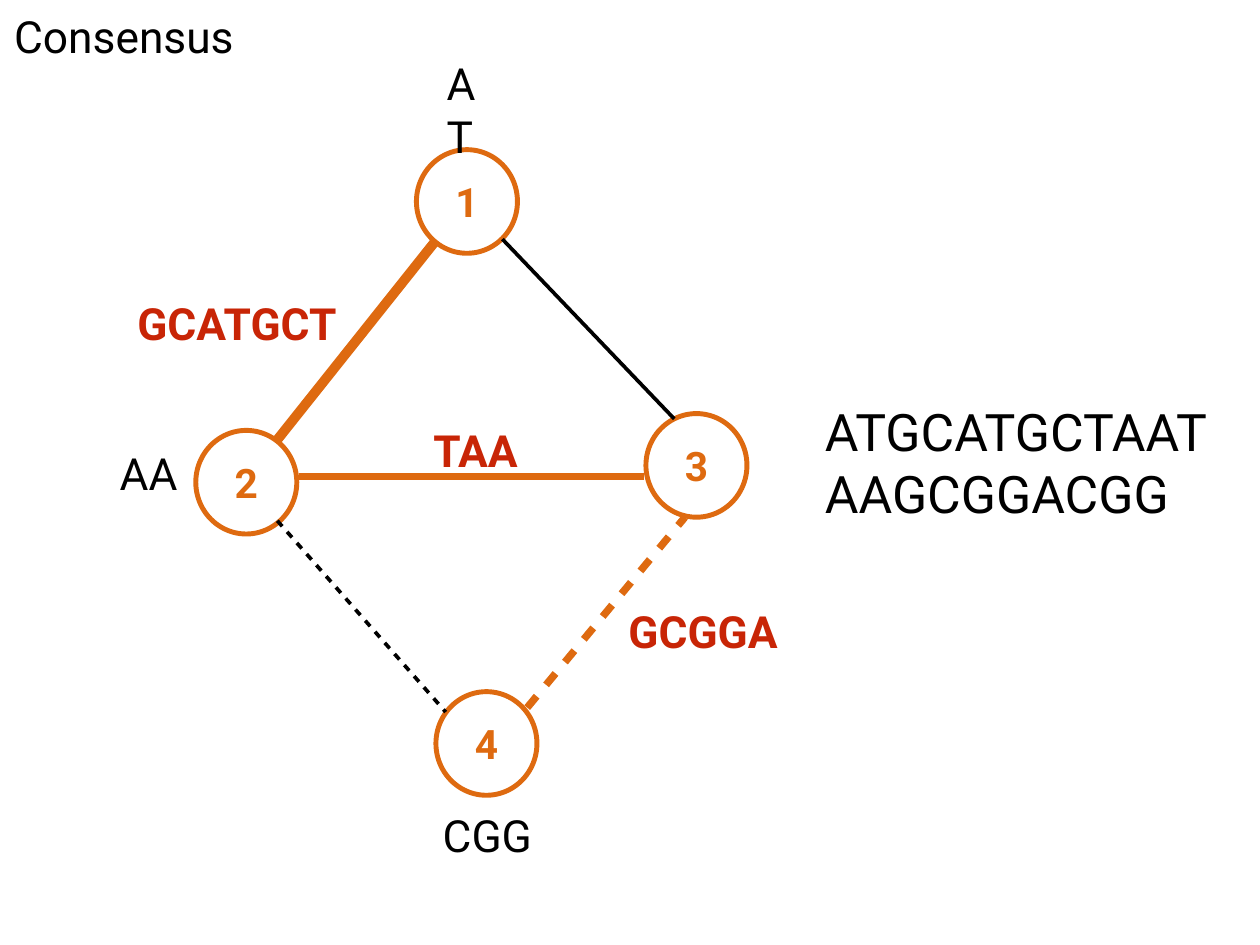
import pptx
import pptx.dml.color
import pptx.enum.shapes
import pptx.enum.text
import pptx.oxml
import pptx.oxml.ns
import pptx.util
import lxml.etree

Inches = pptx.util.Inches
Pt = pptx.util.Pt
RGBColor = pptx.dml.color.RGBColor
PP_ALIGN = pptx.enum.text.PP_ALIGN

BLACK = RGBColor(0x00, 0x00, 0x00)
ORANGE = RGBColor(0xDE, 0x6A, 0x10)
RED = RGBColor(0xC8, 0x25, 0x06)

NODES = {"3": (7.29, 4.67), "4": (4.92, 7.81), "2": (2.21, 4.86), "1": (4.70, 1.69)}

EDGES = [
    ((3.11, 4.99), (4.90, 2.74), ORANGE, 8, False),
    ((5.67, 2.70), (7.61, 4.73), BLACK, 3, False),
    ((3.13, 5.88), (5.03, 8.04), BLACK, 3, True),
    ((5.95, 7.99), (7.73, 5.84), ORANGE, 6, True),
    ((3.38, 5.38), (7.27, 5.38), ORANGE, 6, False),
]

NODE_SEQUENCES = [
    ("AT", (4.98, 0.88, 0.60, 0.71), {"wrap": True}),
    ("AA", (1.29, 4.98, 0.79, 0.71), {}),
    ("CGG", (4.87, 9.07, 1.26, 0.71), {"align": PP_ALIGN.CENTER}),
]

EDGE_SEQUENCES = [
    ("GCATGCT", (1.49, 3.29, 2.56, 0.71), PP_ALIGN.LEFT),
    ("TAA", (4.83, 4.72, 1.12, 0.71), PP_ALIGN.LEFT),
    ("GCGGA", (6.93, 6.77, 2.01, 0.71), PP_ALIGN.CENTER),
]


class GraphSlide:
    font_name = "Roboto"
    inset = Inches(0.06)
    node_size = (1.14, 1.17)

    def __init__(self, slide):
        self.slide = slide

    def set_text(self, holder, wording, size=36, color=BLACK, bold=False,
                 align=PP_ALIGN.LEFT, wrap=False):
        frame = holder.text_frame
        frame.text = wording
        frame_format = {
            "margin_left": self.inset, "margin_right": self.inset,
            "margin_top": self.inset, "margin_bottom": self.inset,
            "word_wrap": wrap,
            "auto_size": pptx.enum.text.MSO_AUTO_SIZE.NONE,
            "vertical_anchor": pptx.enum.text.MSO_ANCHOR.MIDDLE,
        }
        for attribute, setting in frame_format.items():
            setattr(frame, attribute, setting)
        paragraph = frame.paragraphs[0]
        paragraph.alignment = align
        font = paragraph.runs[0].font
        for attribute, setting in {"name": self.font_name, "size": Pt(size), "bold": bold}.items():
            setattr(font, attribute, setting)
        font.color.rgb = color

    def title(self, wording, box):
        heading = self.slide.shapes.title
        for attribute, length in zip(("left", "top", "width", "height"), box):
            setattr(heading, attribute, Inches(length))
        self.set_text(heading, wording)

    def label(self, wording, box, **style):
        self.set_text(self.slide.shapes.add_textbox(*map(Inches, box)), wording, **style)

    def node(self, number, corner):
        circle = self.slide.shapes.add_shape(
            pptx.enum.shapes.MSO_SHAPE.OVAL, *map(Inches, corner + self.node_size))
        circle.shadow.inherit = False
        circle.fill.background()
        circle.line.color.rgb = ORANGE
        circle.line.width = Pt(4)
        self.set_text(circle, number, size=33, color=ORANGE, bold=True,
                      align=PP_ALIGN.CENTER, wrap=True)

    def edge(self, start, end, color, width, dashed):
        link = self.slide.shapes.add_connector(
            pptx.enum.shapes.MSO_CONNECTOR.STRAIGHT, *map(Inches, start + end))
        link.line.color.rgb = color
        link.line.width = Pt(width)
        qn = pptx.oxml.ns.qn
        properties = link._element.spPr
        if dashed:
            dashes = lxml.etree.SubElement(properties.find(qn("a:ln")), qn("a:custDash"))
            lxml.etree.SubElement(dashes, qn("a:ds"), d="200000", sp="200000")
        lxml.etree.SubElement(properties, qn("a:effectLst"))


def main():
    deck = pptx.Presentation()
    deck.slide_width = Inches(14.22)
    deck.slide_height = Inches(10.67)
    graph = GraphSlide(deck.slides.add_slide(deck.slide_layouts[5]))

    graph.title("Consensus", (0.10, 0.05, 2.63, 0.71))
    for number, corner in NODES.items():
        graph.node(number, corner)
    for edge in EDGES:
        graph.edge(*edge)
    for sequence, box, style in NODE_SEQUENCES:
        graph.label(sequence, box, **style)
    for sequence, box, align in EDGE_SEQUENCES:
        graph.label(sequence, box, color=RED, bold=True, align=align)
    graph.label("ATGCATGCTAATAAGCGGACGG", (9.25, 4.47, 4.63, 1.50), size=42, wrap=True)

    deck.save("out.pptx")


if __name__ == "__main__":
    main()
